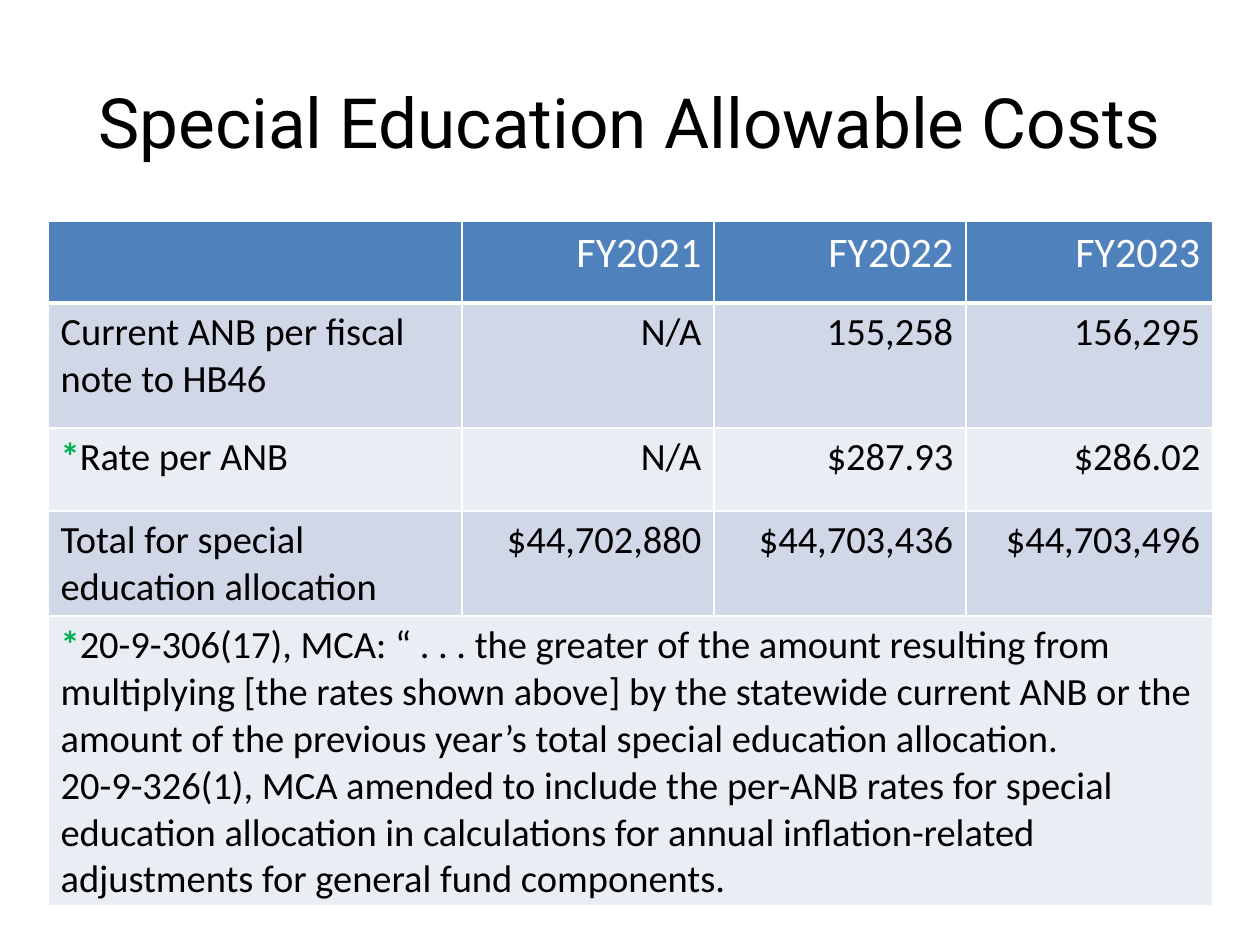
from dataclasses import dataclass

from lxml.etree import SubElement
from pptx import Presentation
from pptx.dml.color import RGBColor
from pptx.enum.text import MSO_ANCHOR as Anchor, PP_ALIGN as Align
from pptx.oxml.ns import qn
from pptx.util import Emu, Pt

PX = 914400 // 126  # one px in EMU


@dataclass(frozen=True)
class Theme:
    title_font: str = "Roboto"
    body_font: str = "Calibri"
    title_size: float = 39.6
    header_size: int = 24
    body_size: int = 22
    black: str = "000000"
    white: str = "FFFFFF"
    green: str = "00B050"
    header_fill: str = "4F81BD"
    bands: tuple = ("D0D8E8", "E9EDF4")


theme = Theme()


def add_span(para, text, font, size, color, bold=False):
    span = para.add_run()
    span.text = text
    span.font.name = font
    span.font.size = Pt(size)
    span.font.bold = bold
    span.font.color.rgb = RGBColor.from_string(color)


def add_borders(cell, bottom_width):
    properties = cell._tc.get_or_add_tcPr()
    for side, width in (("L", 1), ("R", 1), ("T", 1), ("B", bottom_width)):
        line = SubElement(properties, qn(f"a:ln{side}"), w=str(Pt(width)))
        fill = SubElement(line, qn("a:solidFill"))
        SubElement(fill, qn("a:srgbClr"), val=theme.white)


deck = Presentation()
deck.slide_width, deck.slide_height = Emu(1260 * PX), Emu(945 * PX)
page = deck.slides.add_slide(deck.slide_layouts[6])

# Title
box = page.shapes.add_textbox(63 * PX, 42 * PX, 1134 * PX, 157 * PX)
box.text_frame.word_wrap = True
box.text_frame.vertical_anchor = Anchor.MIDDLE
para = box.text_frame.paragraphs[0]
para.alignment = Align.CENTER
add_span(para, "Special Education Allowable Costs",
         theme.title_font, theme.title_size, theme.black)

# Table content: a leading asterisk marks the rate and its footnote
rows = [
    ["", "FY2021", "FY2022", "FY2023"],
    ["Current ANB per fiscal note to HB46", "N/A", "155,258", "156,295"],
    ["*Rate per ANB", "N/A", "$287.93", "$286.02"],
    ["Total for special education allocation",
     "$44,702,880", "$44,703,436", "$44,703,496"],
    ["*20-9-306(17), MCA: “ . . . the greater of the amount resulting from "
     "multiplying [the rates shown above] by the statewide current ANB or the "
     "amount of the previous year’s total special education allocation.\n"
     "20-9-326(1), MCA amended to include the per-ANB rates for special "
     "education allocation in calculations for annual inflation-related "
     "adjustments for general fund components.", "", "", ""],
]
column_widths = [414, 252, 252, 247]
row_heights = [82, 125, 83, 105, 290]

# Table grid
table = page.shapes.add_table(
    len(rows), len(column_widths), 48 * PX, 221 * PX,
    sum(column_widths) * PX, sum(row_heights) * PX).table
for column, width in zip(table.columns, column_widths):
    column.width = Emu(width * PX)
for row, height in zip(table.rows, row_heights):
    row.height = Emu(height * PX)
table.cell(4, 0).merge(table.cell(4, 3))

# Table cells
for r, texts in enumerate(rows):
    is_header = r == 0
    fill_color = theme.header_fill if is_header else theme.bands[(r - 1) % 2]
    size = theme.header_size if is_header else theme.body_size
    color = theme.white if is_header else theme.black
    for c, text in enumerate(texts):
        cell = table.cell(r, c)
        add_borders(cell, 3 if is_header else 1)
        cell.fill.solid()
        cell.fill.fore_color.rgb = RGBColor.from_string(fill_color)
        if not text:
            continue
        for i, line in enumerate(text.split("\n")):
            frame = cell.text_frame
            para = frame.add_paragraph() if i else frame.paragraphs[0]
            para.alignment = Align.RIGHT if c else Align.LEFT
            if line.startswith("*"):
                add_span(para, "*", theme.body_font, size, theme.green, True)
            add_span(para, line.removeprefix("*"), theme.body_font, size, color)
table.cell(3, 0).vertical_anchor = Anchor.BOTTOM

deck.save("out.pptx")
